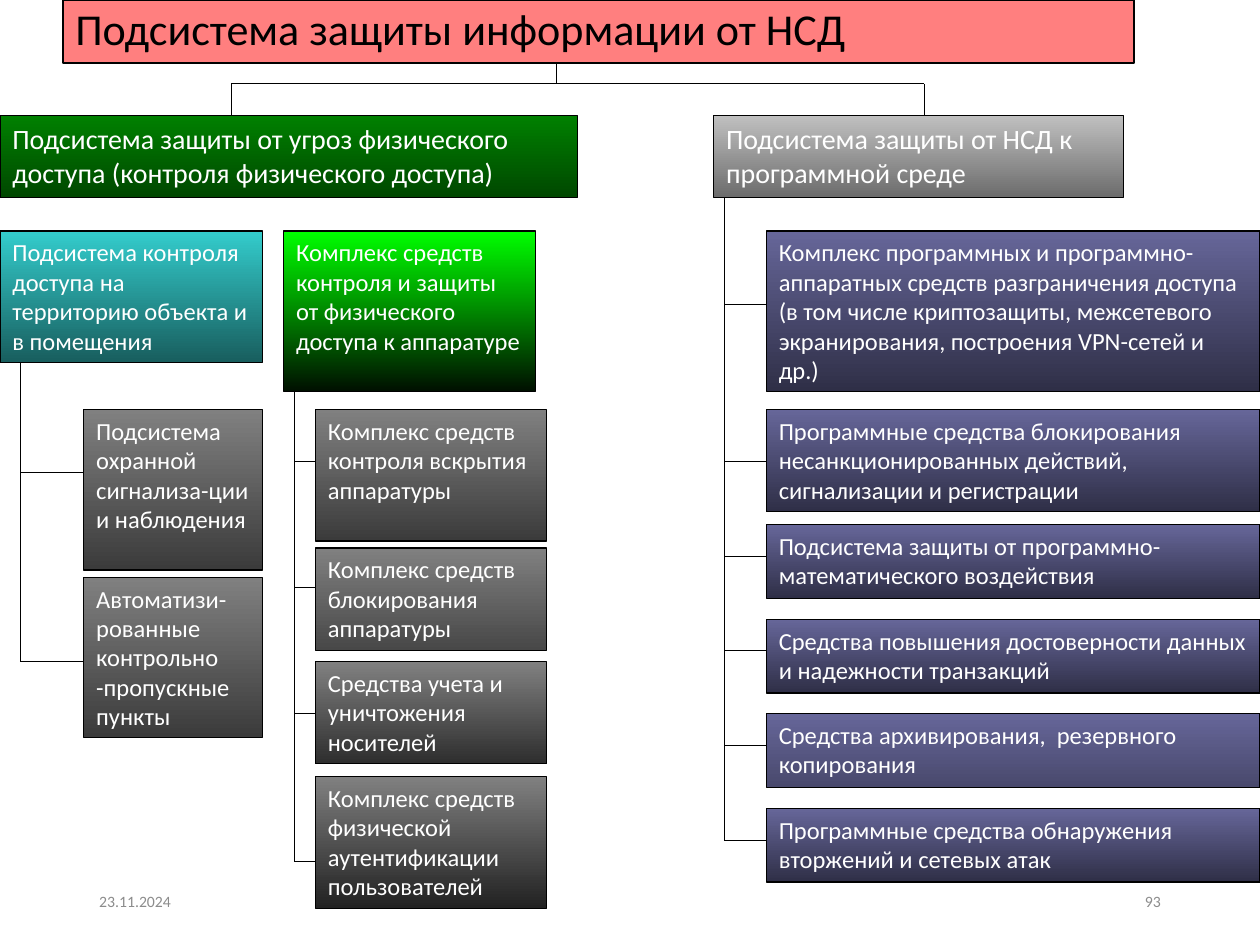
from pptx import Presentation
from pptx.dml.color import RGBColor
from pptx.enum.shapes import MSO_CONNECTOR, MSO_SHAPE
from pptx.enum.text import MSO_ANCHOR, PP_ALIGN
from pptx.oxml.ns import qn
from pptx.util import Cm, Pt
from lxml import etree

RECTANGLE = MSO_SHAPE.RECTANGLE
STRAIGHT = MSO_CONNECTOR.STRAIGHT
TOP, MIDDLE = MSO_ANCHOR.TOP, MSO_ANCHOR.MIDDLE
LEFT, RIGHT = PP_ALIGN.LEFT, PP_ALIGN.RIGHT

FONT = "Calibri"
BLACK = RGBColor(0x00, 0x00, 0x00)
WHITE = RGBColor(0xFF, 0xFF, 0xFF)
FOOTER_GRAY = RGBColor(0x8C, 0x8C, 0x8C)
RED = RGBColor(0xFF, 0x00, 0x00)
GREEN = RGBColor(0x00, 0x80, 0x00)
DARK_GREEN = RGBColor(0x00, 0x48, 0x00)
LIME = RGBColor(0x00, 0xFF, 0x00)
DEEP_GREEN = RGBColor(0x00, 0x10, 0x00)
TEAL = RGBColor(0x33, 0xCC, 0xCC)
DARK_TEAL = RGBColor(0x18, 0x5E, 0x5E)
SILVER = RGBColor(0xC0, 0xC0, 0xC0)
DARK_SILVER = RGBColor(0x6C, 0x6C, 0x6C)
GRAY = RGBColor(0x80, 0x80, 0x80)
GRAY_3B = RGBColor(0x3B, 0x3B, 0x3B)
GRAY_48 = RGBColor(0x48, 0x48, 0x48)
GRAY_2E = RGBColor(0x2E, 0x2E, 0x2E)
GRAY_22 = RGBColor(0x22, 0x22, 0x22)
VIOLET = RGBColor(0x66, 0x66, 0x99)
DARK_VIOLET = RGBColor(0x2F, 0x2F, 0x47)
MID_VIOLET = RGBColor(0x49, 0x49, 0x6D)

# Each part: top and height, height of its branch line, lower colour, text.
TERRITORY_PARTS = [
    (3.6, 3.23, 4.87, GRAY_3B, "Подсистема охранной сигнализа-ции и наблюдения"),
    (6.98, 3.23, 8.68, GRAY_3B, "Автоматизи-рованные контрольно -пропускные пункты"),
]
EQUIPMENT_PARTS = [
    (3.6, 2.65, 4.65, GRAY_3B, "Комплекс средств контроля вскрытия аппаратуры"),
    (6.39, 2.06, 7.19, GRAY_48, "Комплекс средств блокирования аппаратуры"),
    (8.68, 2.06, 9.73, GRAY_2E, "Средства учета и уничтожения носителей"),
    (11, 2.65, 12.7, GRAY_22,
     "Комплекс средств физической аутентификации пользователей"),
]
SOFTWARE_PARTS = [
    (2.33, 3.23, 3.81, DARK_VIOLET,
     "Комплекс программных и программно-аппаратных средств разграничения доступа "
     "(в том числе криптозащиты, межсетевого экранирования, построения VPN-сетей и др.)"),
    (5.93, 2.06, 6.98, DARK_VIOLET,
     "Программные средства блокирования несанкционированных действий, "
     "сигнализации и регистрации"),
    (8.25, 1.48, 8.89, DARK_VIOLET,
     "Подсистема защиты от программно-математического воздействия"),
    (10.16, 1.48, 10.79, DARK_VIOLET,
     "Средства повышения достоверности данных и надежности транзакций"),
    (12.06, 1.48, 12.7, MID_VIOLET,
     "Средства архивирования,  резервного копирования"),
    (13.97, 1.48, 14.61, DARK_VIOLET,
     "Программные средства обнаружения вторжений и сетевых атак"),
]


def write_text(shape, text, size, color, anchor=TOP, align=LEFT):
    frame = shape.text_frame
    frame.word_wrap = True
    frame.vertical_anchor = anchor
    paragraph = frame.paragraphs[0]
    paragraph.text = text
    paragraph.alignment = align
    paragraph.font.name = FONT
    paragraph.font.size = Pt(size)
    paragraph.font.color.rgb = color
    return paragraph


def add_box(slide, left, top, width, height):
    box = slide.shapes.add_shape(RECTANGLE, Cm(left), Cm(top), Cm(width), Cm(height))
    box.shadow.inherit = False
    box.line.color.rgb = BLACK
    box.line.width = Pt(0.75)
    return box


def add_gradient_box(slide, bounds, colors, text, size=14):
    box = add_box(slide, *bounds)
    box.fill.gradient()
    box.fill.gradient_angle = 270
    for stop, color in zip(box.fill.gradient_stops, colors):
        stop.color.rgb = color
    write_text(box, text, size, WHITE)


def add_line(slide, x1, y1, x2, y2):
    line = slide.shapes.add_connector(STRAIGHT, Cm(x1), Cm(y1), Cm(x2), Cm(y2))
    line.line.color.rgb = BLACK
    line.line.width = Pt(0.75)
    etree.SubElement(line._element.spPr, qn("a:effectLst"))


def add_title(slide, left, top, width, height):
    title = add_box(slide, left, top, width, height)
    title.fill.solid()
    title.fill.fore_color.rgb = RED
    red = title._element.spPr.find(qn("a:solidFill")).find(qn("a:srgbClr"))
    etree.SubElement(red, qn("a:alpha"), val="50000")
    paragraph = write_text(title, "Подсистема защиты информации от НСД",
                           25.2, BLACK, MIDDLE)
    paragraph.line_spacing = 0.9


def add_fork(slide, left, top, width, stem_x, stem, drop):
    """Bar with a stem up to the title and a drop at each end."""
    right = left + width
    add_line(slide, left, top, right, top)
    add_line(slide, stem_x, top, stem_x, top - stem)
    for x in (left, right):
        add_line(slide, x, top, x, top + drop)


def add_branch(slide, head, head_colors, head_text, head_size,
               trunk, indent, part_width, part_color, parts):
    """Head box with a trunk below it and parts hanging off the trunk."""
    left, top, _, height = head
    trunk_x, parts_left = left + trunk, left + indent
    add_line(slide, trunk_x, top + height, trunk_x, top + parts[-1][2])
    add_gradient_box(slide, head, head_colors, head_text, head_size)
    for part_top, part_height, joint, lower_color, text in parts:
        add_gradient_box(slide, (parts_left, top + part_top, part_width, part_height),
                         (part_color, lower_color), text)
        add_line(slide, trunk_x, top + joint, parts_left, top + joint)


def add_footer(slide, left, top, width, height):
    field_width = 5.72
    fields = (("23.11.2024", left, LEFT), ("93", left + width - field_width, RIGHT))
    for text, x, align in fields:
        field = slide.shapes.add_textbox(Cm(x), Cm(top), Cm(field_width), Cm(height))
        write_text(field, text, 9, FOOTER_GRAY, MIDDLE, align)


def main():
    deck = Presentation()
    deck.slide_width, deck.slide_height = Cm(25.4), Cm(19.05)
    slide = deck.slides.add_slide(deck.slide_layouts[6])

    add_title(slide, 1.27, 0, 21.59, 1.27)
    add_footer(slide, 1.75, 17.65, 21.9, 1.02)
    add_gradient_box(slide, (0, 2.33, 11.64, 1.65), (GREEN, DARK_GREEN),
                     "Подсистема защиты от угроз физического доступа "
                     "(контроля физического доступа)", 16)
    add_branch(slide, (0, 4.66, 5.29, 2.65), (TEAL, DARK_TEAL),
               "Подсистема контроля доступа на территорию объекта и в помещения", 14,
               0.42, 1.69, 3.6, GRAY, TERRITORY_PARTS)
    add_branch(slide, (5.72, 4.66, 5.08, 3.23), (LIME, DEEP_GREEN),
               "Комплекс средств контроля и защиты от физического доступа к аппаратуре", 14,
               0.21, 0.64, 4.66, GRAY, EQUIPMENT_PARTS)
    add_branch(slide, (14.39, 2.33, 8.26, 1.65), (SILVER, DARK_SILVER),
               "Подсистема защиты от НСД к программной среде", 16,
               0.21, 1.06, 9.95, VIOLET, SOFTWARE_PARTS)
    add_fork(slide, 4.66, 1.69, 13.97, 11.22, 0.42, 0.64)

    deck.save("out.pptx")


if __name__ == "__main__":
    main()
